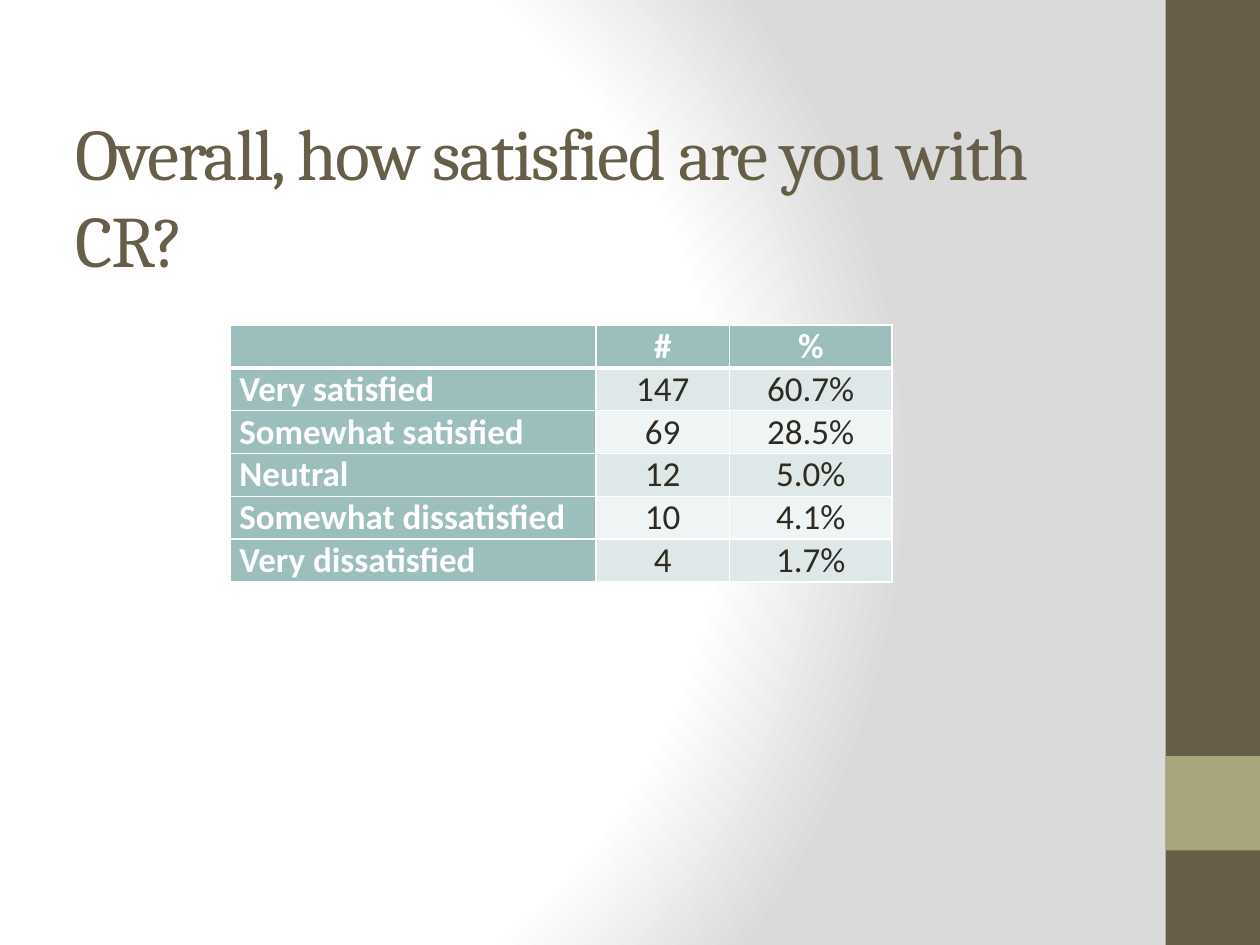
import pptx
import pptx.dml.color
import pptx.enum.shapes
import pptx.enum.text
import pptx.oxml
import pptx.oxml.ns
import pptx.util

Inches = pptx.util.Inches
Pt = pptx.util.Pt
Align = pptx.enum.text.PP_ALIGN
Anchor = pptx.enum.text.MSO_ANCHOR

COLORS = {
    "brown": "675E47",
    "olive": "A9A57C",
    "teal": "9CBEBD",
    "band": "DEE8E8",
    "pale": "EFF4F4",
    "ink": "2F2B20",
    "white": "FFFFFF",
    "gray": "DADADA",
}
ROWS = [
    ("", "#", "%"),
    ("Very satisfied", "147", "60.7%"),
    ("Somewhat satisfied", "69", "28.5%"),
    ("Neutral", "12", "5.0%"),
    ("Somewhat dissatisfied", "10", "4.1%"),
    ("Very dissatisfied", "4", "1.7%"),
]
WIDTHS = [2.9, 1.06, 1.29]
ROW_HIGH = 0.34


def color(name):
    return pptx.dml.color.RGBColor.from_string(COLORS[name])


def node(tag, attrs, body):
    """Make a DrawingML element."""
    space = pptx.oxml.ns.nsdecls("a")
    return pptx.oxml.parse_xml(f"<a:{tag} {space} {attrs}>{body}</a:{tag}>")


def solid(name):
    return f'<a:srgbClr val="{COLORS[name]}"/>'


class Painter:
    def __init__(self, slide):
        self.slide = slide
        self.head = "Cambria"
        self.body = "Calibri"

    def backdrop(self, stops, center):
        """Fill the background with a circular gradient; center is l, t, r, b in percent."""
        fill = self.slide.background.fill
        fill.gradient()
        old = self.slide.element.find(".//" + pptx.oxml.ns.qn("a:gradFill"))
        marks = "".join(
            f'<a:gs pos="{spot * 1000}">{solid(name)}</a:gs>' for spot, name in stops
        )
        sides = " ".join(f'{side}="{part * 1000}"' for side, part in zip("ltrb", center))
        new = node(
            "gradFill",
            'rotWithShape="1"',
            f"<a:gsLst>{marks}</a:gsLst>"
            f'<a:path path="circle"><a:fillToRect {sides}/></a:path>',
        )
        old.getparent().replace(old, new)

    def block(self, left, top, width, height, fill):
        kind = pptx.enum.shapes.MSO_SHAPE.RECTANGLE
        shape = self.slide.shapes.add_shape(
            kind, Inches(left), Inches(top), Inches(width), Inches(height)
        )
        shape.shadow.inherit = False
        shape.fill.solid()
        shape.fill.fore_color.rgb = color(fill)
        shape.line.fill.background()

    def font(self, para, face, size, ink, bold=False):
        para.font.name = face
        para.font.size = Pt(size)
        para.font.bold = bold
        para.font.color.rgb = color(ink)

    def title(self, text, left, top, width, height):
        box = self.slide.shapes.add_textbox(
            Inches(left), Inches(top), Inches(width), Inches(height)
        )
        frame = box.text_frame
        frame.word_wrap = True
        frame.vertical_anchor = Anchor.MIDDLE
        para = frame.paragraphs[0]
        run = para.add_run()
        run.text = text
        self.font(para, self.head, 41.4, "brown")
        run._r.get_or_add_rPr().set("spc", "-100")

    def border(self, cell, **sides):
        """Draw white cell borders; sides gives points for L, R, T and B."""
        props = cell._tc.get_or_add_tcPr()
        for spot, (side, points) in enumerate(sides.items()):
            line = node(
                f"ln{side}", f'w="{Pt(points)}"', f"<a:solidFill>{solid('white')}</a:solidFill>"
            )
            props.insert(spot, line)

    def cell(self, cell, text, row, col):
        label = row == 0 or col == 0
        cell.margin_left = cell.margin_right = Inches(0.07)
        cell.margin_top = cell.margin_bottom = 0
        cell.vertical_anchor = Anchor.BOTTOM
        cell.fill.solid()
        cell.fill.fore_color.rgb = color("teal" if label else "band" if row % 2 else "pale")
        cell.text = text
        para = cell.text_frame.paragraphs[0]
        para.alignment = Align.CENTER if col else Align.LEFT
        self.font(para, self.body, 20, "white" if label else "ink", label)
        self.border(cell, L=1, R=1, T=3 if row == 1 else 1, B=1 if row else 3)

    def table(self, rows, left, top, widths, high):
        frame = self.slide.shapes.add_table(
            len(rows), len(widths), Inches(left), Inches(top),
            Inches(sum(widths)), Inches(high * len(rows)),
        )
        table = frame.table
        for column, width in zip(table.columns, widths):
            column.width = Inches(width)
        for r, row in enumerate(rows):
            table.rows[r].height = Inches(high)
            for c, text in enumerate(row):
                self.cell(table.cell(r, c), text, r, c)


def main():
    deck = pptx.Presentation()
    deck.slide_width = Inches(10)
    deck.slide_height = Inches(7.5)
    paint = Painter(deck.slides.add_slide(deck.slide_layouts[6]))
    paint.backdrop([(0, "white"), (75, "white"), (100, "gray")], (20, 50, 100, 50))
    paint.block(9.25, 0, 0.75, 7.5, "brown")
    paint.block(9.25, 6, 0.75, 0.75, "olive")
    paint.title("Overall, how satisfied are you with CR?", 0.5, 0.92, 8.33, 1.25)
    paint.table(ROWS, 1.83, 2.58, WIDTHS, ROW_HIGH)
    deck.save("out.pptx")


if __name__ == "__main__":
    main()
